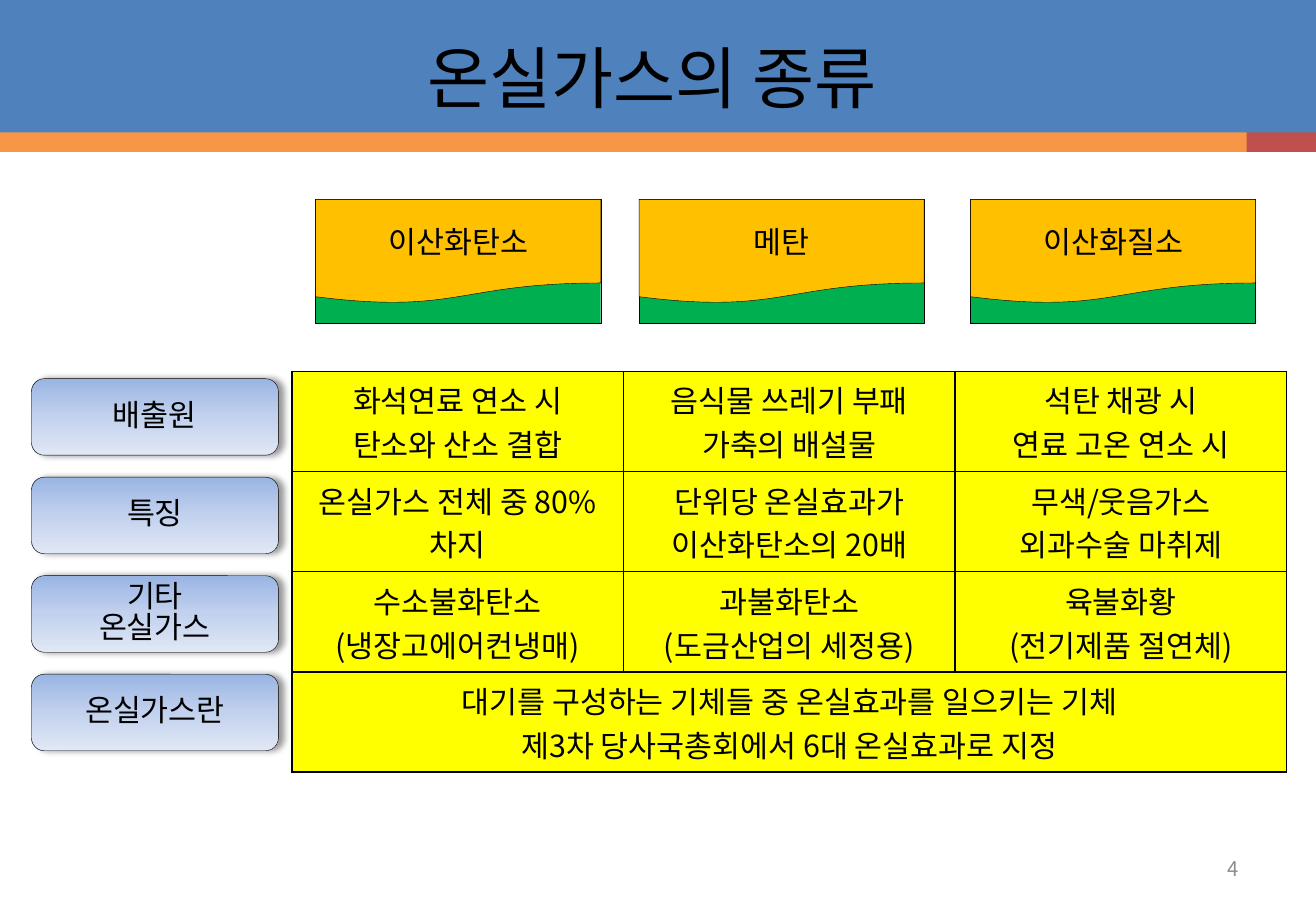
from typing import NamedTuple

from lxml.etree import SubElement
from pptx import Presentation
from pptx.dml.color import RGBColor
from pptx.enum.shapes import MSO_SHAPE
from pptx.enum.text import MSO_ANCHOR, PP_ALIGN
from pptx.oxml import parse_xml
from pptx.oxml.ns import nsdecls, qn
from pptx.util import Cm, Pt

FONT = "Noto Sans CJK KR"
BLACK = "000000"


class Box(NamedTuple):
    left: float
    top: float
    width: float
    height: float

    def lengths(self) -> list:
        return [Cm(side) for side in self]


class Band(NamedTuple):
    box: Box
    color: str


class Gas(NamedTuple):
    name: str
    left: float


BANDS = [
    Band(Box(21.3, 0, 6.21, 3.18), "C0504D"),
    Band(Box(0, 0, 26.06, 3.18), "F79646"),
    Band(Box(0, 0, 27.51, 2.77), "4F81BD"),
]
GASES = [Gas("이산화탄소", 6.6), Gas("메탄", 13.36), Gas("이산화질소", 20.29)]
LABELS = ["배출원", "특징", "기타\n온실가스", "온실가스란"]
ROWS = [
    ["화석연료 연소 시\n탄소와 산소 결합", "음식물 쓰레기 부패\n가축의 배설물",
     "석탄 채광 시\n연료 고온 연소 시"],
    ["온실가스 전체 중 80% 차지", "단위당 온실효과가\n이산화탄소의 20배",
     "무색/웃음가스\n외과수술 마취제"],
    ["수소불화탄소\n(냉장고에어컨냉매)", "과불화탄소\n(도금산업의 세정용)",
     "육불화황\n(전기제품 절연체)"],
    ["대기를 구성하는 기체들 중 온실효과를 일으키는 기체\n"
     "제3차 당사국총회에서 6대 온실효과로 지정"],
]
STOPS = [(0, "9AB5E4"), (50, "C2D1ED"), (100, "E1E8F5")]


def paint(target, color: str) -> None:
    """Give a fill or a line format one solid colour."""
    fill = getattr(target, "fill", target)
    fill.solid()
    fill.fore_color.rgb = RGBColor.from_string(color)


def write(frame, text: str, size: float = 18, color: str = BLACK,
          align=PP_ALIGN.CENTER, spacing: float = 1) -> None:
    frame.text = text
    frame.word_wrap = True
    for para in frame.paragraphs:
        para.alignment = align
        para.line_spacing = spacing
        font = para.font
        font.size = Pt(size)
        font.name = FONT
        paint(font, color)
        props = para._p.pPr.find(qn("a:defRPr"))
        SubElement(props, qn("a:ea")).set("typeface", FONT)


def add_box(slide, kind, box: Box, color: str = "", line: bool = True):
    shape = slide.shapes.add_shape(kind, *box.lengths())
    shape.shadow.inherit = False
    if color:
        paint(shape, color)
    if line:
        paint(shape.line, BLACK)
        shape.line.width = Pt(0.25)
    else:
        shape.line.fill.background()
    return shape


def add_gas(slide, gas: Gas) -> None:
    add_box(slide, MSO_SHAPE.RECTANGLE, Box(gas.left, 4.17, 5.96, 2.59), "00B050")
    card = add_box(slide, MSO_SHAPE.FLOWCHART_DOCUMENT,
                   Box(gas.left, 4.17, 5.96, 2.18), "FFC000")
    write(card.text_frame, gas.name)


def add_label(slide, text: str, top: float) -> None:
    """Draw a row label with a gradient and a soft shadow."""
    label = add_box(slide, MSO_SHAPE.ROUNDED_RECTANGLE, Box(0.66, top, 5.16, 1.6))
    stops = "".join(
        f'<a:gs pos="{place * 1000}"><a:srgbClr val="{color}"/></a:gs>'
        for place, color in STOPS)
    props = label._element.spPr
    props.insert(2, parse_xml(
        f'<a:gradFill {nsdecls("a")}><a:gsLst>{stops}</a:gsLst>'
        '<a:lin ang="5400000" scaled="0"/></a:gradFill>'))
    props.find(qn("a:effectLst")).append(parse_xml(
        f'<a:outerShdw {nsdecls("a")} blurRad="{Pt(4)}" dist="{Pt(3)}" dir="0">'
        f'<a:srgbClr val="{BLACK}"><a:alpha val="40000"/></a:srgbClr></a:outerShdw>'))
    frame = label.text_frame
    frame.margin_top = frame.margin_bottom = 0
    write(frame, text, spacing=0.85)


def edge(cell) -> None:
    """Put a thin black border round a table cell."""
    props = cell._tc.get_or_add_tcPr()
    for place, side in enumerate("LRTB"):
        props.insert(place, parse_xml(
            f'<a:ln{side} {nsdecls("a")} w="{Pt(1)}"><a:solidFill>'
            f'<a:srgbClr val="{BLACK}"/></a:solidFill></a:ln{side}>'))


def add_facts(slide) -> None:
    box = Box(6.1, 7.77, 20.8, 8.13)
    table = slide.shapes.add_table(len(ROWS), len(GASES), *box.lengths()).table
    for row in table.rows:
        row.height = Cm(box.height / len(ROWS))
    table.cell(3, 0).merge(table.cell(3, 2))
    for cell in table.iter_cells():
        paint(cell, "FFFF00")
        edge(cell)
        cell.vertical_anchor = MSO_ANCHOR.MIDDLE
    for down, texts in enumerate(ROWS):
        for across, text in enumerate(texts):
            write(table.cell(down, across).text_frame, text)


def main() -> None:
    deck = Presentation()
    deck.slide_width, deck.slide_height = Cm(27.51), Cm(19.05)
    slide = deck.slides.add_slide(deck.slide_layouts[5])
    for band in BANDS:
        add_box(slide, MSO_SHAPE.RECTANGLE, band.box, band.color, line=False)

    title = slide.shapes.title
    title.left, title.top, title.width, title.height = Box(1.24, 0, 24.77, 3.18).lengths()
    title.text_frame.vertical_anchor = MSO_ANCHOR.MIDDLE
    write(title.text_frame, "온실가스의 종류", 40)
    slide.shapes._spTree.append(title._element)

    add_facts(slide)
    number = slide.shapes.add_textbox(*Box(19.71, 17.65, 6.43, 1.02).lengths())
    number.text_frame.vertical_anchor = MSO_ANCHOR.MIDDLE
    write(number.text_frame, "4", 12, "8C8C8C", PP_ALIGN.RIGHT)
    for place, text in enumerate(LABELS):
        add_label(slide, text, 7.92 + 2.06 * place)
    for gas in GASES:
        add_gas(slide, gas)
    deck.save("out.pptx")


if __name__ == "__main__":
    main()
